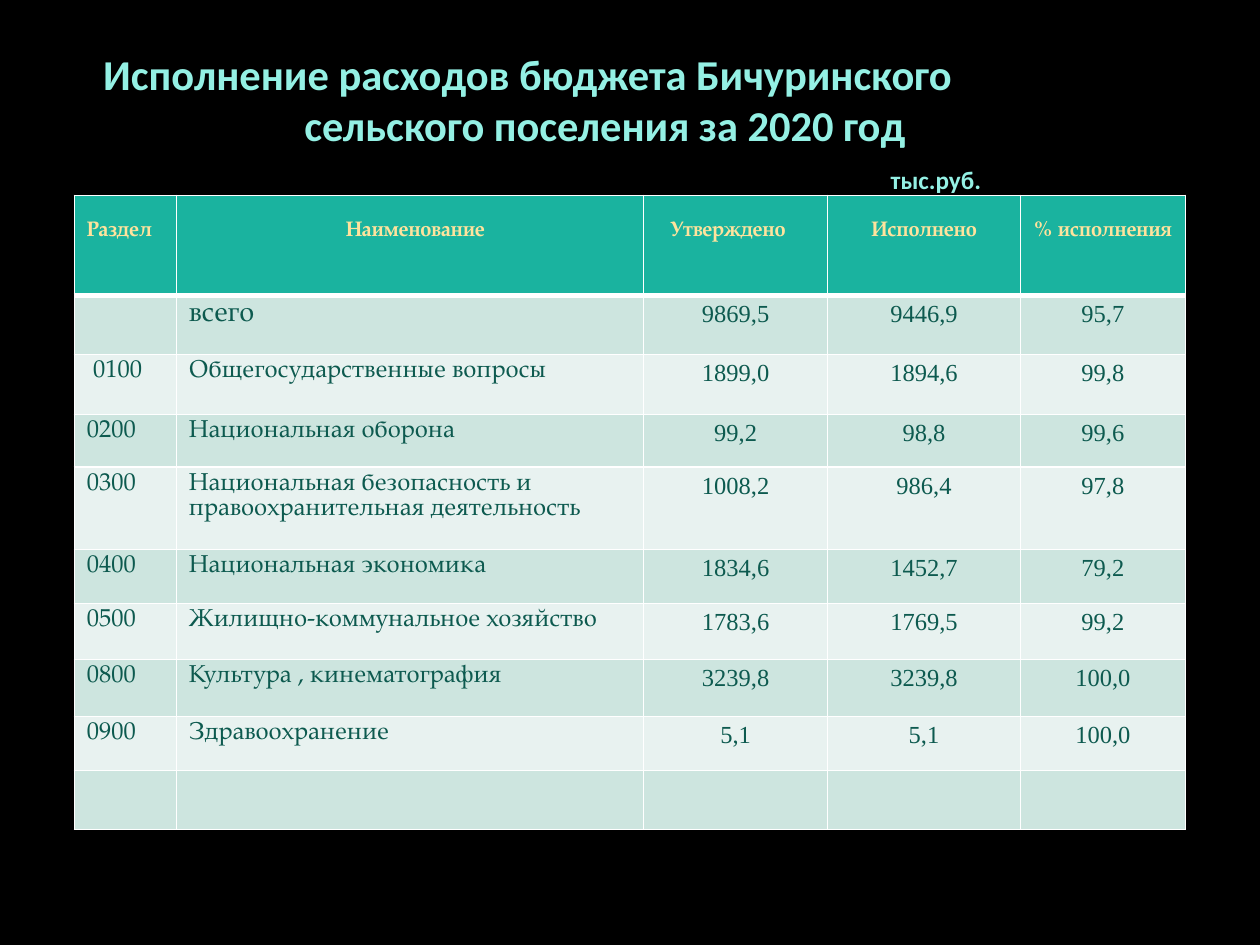
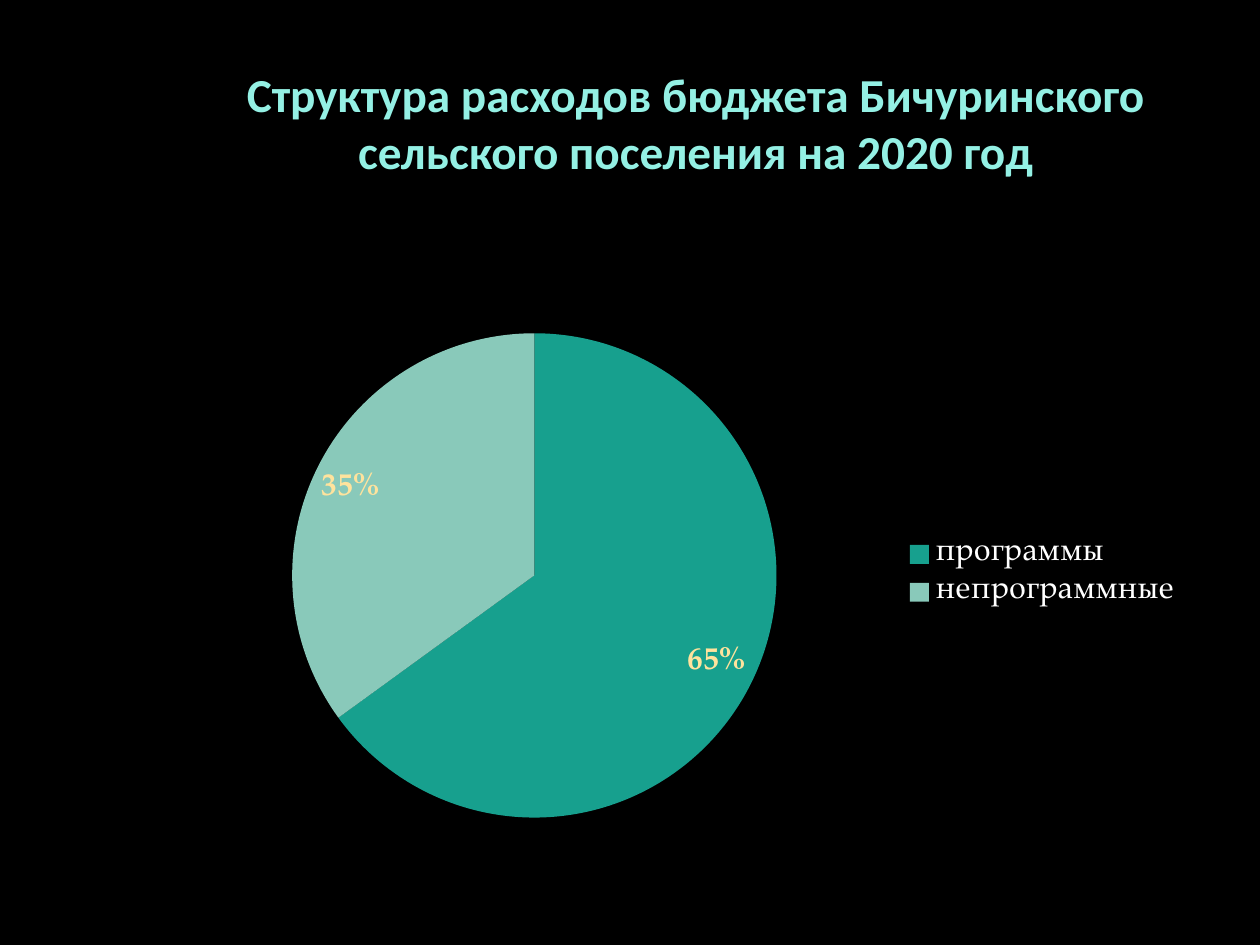
"""Builds two slides on the 2020 budget spending of a rural settlement."""
from dataclasses import dataclass

from lxml.etree import SubElement
from pptx import Presentation
from pptx.chart.data import CategoryChartData as ChartData
from pptx.dml.color import RGBColor as Color
from pptx.enum.chart import XL_CHART_TYPE as ChartType
from pptx.enum.chart import XL_LABEL_POSITION as LabelPosition
from pptx.enum.chart import XL_LEGEND_POSITION as LegendPosition
from pptx.enum.text import MSO_ANCHOR as Anchor
from pptx.enum.text import PP_ALIGN as Align
from pptx.oxml import parse_xml
from pptx.oxml.ns import nsdecls, qn
from pptx.util import Pt


@dataclass(frozen=True)
class Theme:
    background: str = "000000"
    title: str = "94F0E4"
    heading: str = "FFE39D"
    header_fill: str = "1AB39F"
    bands: tuple = ("CDE5DF", "E8F2F0")
    body: str = "0D5A4F"
    white: str = "FFFFFF"
    slices: tuple = ("17A08E", "89C9BA")
    title_font: str = "Calibri"
    text_font: str = "TeX Gyre Pagella"
    number_font: str = "Times New Roman"
    header_size: float = 12
    body_size: float = 14
    total_size: float = 16
    chart_size: float = 18
    unit_size: float = 14.4
    table_title_size: float = 24.3
    chart_title_size: float = 27
    leading: float = 1.04


THEME = Theme()

TABLE_TITLE = [
    ("Исполнение расходов бюджета Бичуринского", THEME.table_title_size, 34, 0),
    ("сельского поселения за 2020 год", THEME.table_title_size, 149, 0),
    ("тыс.руб.", THEME.unit_size, 484, 8),
]
CHART_TITLE = [
    ("Структура расходов бюджета Бичуринского", THEME.chart_title_size, 0, 0),
    ("сельского поселения на 2020 год", THEME.chart_title_size, 0, 0),
]

HEADERS = [
    ("Раздел", Align.LEFT, 7.2, 0),
    ("Наименование", Align.CENTER, 7.2, 1.2),
    ("Утверждено", Align.CENTER, 0, 9),
    ("Исполнено", Align.CENTER, 0, 0),
    ("% исполнения", Align.CENTER, 0, 0),
]
SPENDING = [
    ("", "всего", "9869,5", "9446,9", "95,7"),
    (" 0100", "Общегосударственные вопросы", "1899,0", "1894,6", "99,8"),
    ("0200", "Национальная оборона", "99,2", "98,8", "99,6"),
    ("0300", "Национальная безопасность и правоохранительная деятельность",
     "1008,2", "986,4", "97,8"),
    ("0400", "Национальная экономика", "1834,6", "1452,7", "79,2"),
    ("0500", "Жилищно-коммунальное хозяйство", "1783,6", "1769,5", "99,2"),
    ("0800", "Культура , кинематография", "3239,8", "3239,8", "100,0"),
    ("0900", "Здравоохранение", "5,1", "5,1", "100,0"),
    ("", "", "", "", ""),
]
COLUMN_WIDTHS = (58.3, 267.1, 105.1, 110.2, 94.3)
ROW_HEIGHTS = (57.4, 33.6, 34.2, 30.2, 47.2, 30.6, 32.2, 32.4, 31, 33.8)
SHARES = {"программы": 0.65, "непрограммные": 0.35}
PIE_AREA = {"x": 0.133, "y": 0.098, "w": 0.465, "h": 0.811}


def apply(target, **values):
    for name, value in values.items():
        setattr(target, name, value)


def set_font(font, name, size, color, bold=False):
    apply(font, name=name, size=Pt(size), bold=bold)
    font.color.rgb = Color.from_string(color)


def set_fill(fill, color):
    fill.solid()
    fill.fore_color.rgb = Color.from_string(color)


def add_page(deck):
    page = deck.slides.add_slide(deck.slide_layouts[6])
    set_fill(page.background.fill, THEME.background)
    return page


def add_title(page, lines, place, align):
    box = page.shapes.add_textbox(*map(Pt, place))
    frame = box.text_frame
    apply(frame, word_wrap=True, vertical_anchor=Anchor.TOP,
          margin_left=0, margin_right=0, margin_top=0, margin_bottom=0)
    for index, (text, size, indent, gap) in enumerate(lines):
        para = frame.add_paragraph() if index else frame.paragraphs[0]
        apply(para, alignment=align, space_before=Pt(gap))
        para._p.get_or_add_pPr().set("marL", str(Pt(indent)))
        span = para.add_run()
        span.text = text
        set_font(span.font, THEME.title_font, size, THEME.title, True)


def set_borders(cell, widths):
    properties = cell._tc.get_or_add_tcPr()
    for index, (side, width) in enumerate(widths.items()):
        line = parse_xml(f'<a:{side} {nsdecls("a")} w="{Pt(width)}"/>')
        solid = SubElement(line, qn("a:solidFill"))
        SubElement(solid, qn("a:srgbClr")).set("val", THEME.white)
        properties.insert(index, line)


def fill_cell(cell, text, font, size, color, align, margins, bold=False, leading=None):
    left, right, top = margins
    apply(cell, margin_left=Pt(left), margin_right=Pt(right), margin_top=Pt(top))
    para = cell.text_frame.paragraphs[0]
    para.alignment = align
    if leading:
        para.line_spacing = Pt(round(size * leading, 1))
    if text:
        span = para.add_run()
        span.text = text
        set_font(span.font, font, size, color, bold)


def add_spending_table(page):
    place = (42.5, 111.6, sum(COLUMN_WIDTHS), sum(ROW_HEIGHTS))
    table = page.shapes.add_table(
        len(ROW_HEIGHTS), len(COLUMN_WIDTHS), *map(Pt, place)).table
    for column, width in zip(table.columns, COLUMN_WIDTHS):
        column.width = Pt(width)
    for row, height in zip(table.rows, ROW_HEIGHTS):
        row.height = Pt(height)

    for column, (text, align, left, right) in enumerate(HEADERS):
        cell = table.cell(0, column)
        fill_cell(cell, text, THEME.text_font, THEME.header_size, THEME.heading,
                  align, (left, right, 14.3), True, THEME.leading)
        set_fill(cell.fill, THEME.header_fill)
        set_borders(cell, {"lnL": 1, "lnR": 1, "lnT": 1, "lnB": 3})

    for row, values in enumerate(SPENDING, 1):
        for column, text in enumerate(values):
            cell = table.cell(row, column)
            if column < 2:
                size = THEME.total_size if row == 1 else THEME.body_size
                fill_cell(cell, text, THEME.text_font, size, THEME.body,
                          Align.LEFT, (7.2, 7.2, 2.5), leading=THEME.leading)
            else:
                fill_cell(cell, text, THEME.number_font, THEME.body_size,
                          THEME.body, Align.CENTER, (7.2, 7.2, 3))
            set_fill(cell.fill, THEME.bands[(row - 1) % 2])
            set_borders(cell, {"lnL": 1, "lnR": 1,
                               "lnT": 3 if row == 1 else 1, "lnB": 1})


def place_plot(chart):
    area = chart._chartSpace.chart.plotArea
    for old in area.findall(qn("c:layout")):
        area.remove(old)
    layout = parse_xml(f'<c:layout {nsdecls("c")}/>')
    manual = SubElement(layout, qn("c:manualLayout"))
    settings = {"layoutTarget": "inner", "xMode": "edge", "yMode": "edge", **PIE_AREA}
    for name, value in settings.items():
        SubElement(manual, qn(f"c:{name}")).set("val", str(value))
    area.insert(0, layout)


def add_share_chart(page):
    data = ChartData(number_format="0%")
    data.categories = list(SHARES)
    data.add_series("Series 1", list(SHARES.values()))
    place = (87.8, 157, 595.4, 341.3)
    chart = page.shapes.add_chart(ChartType.PIE, *map(Pt, place), data).chart
    apply(chart, has_title=False, has_legend=True)
    set_font(chart.font, THEME.text_font, THEME.chart_size, THEME.white)
    apply(chart.legend, position=LegendPosition.RIGHT, include_in_layout=False)
    place_plot(chart)

    plot = chart.plots[0]
    apply(plot, vary_by_categories=True, has_data_labels=True)
    labels = plot.data_labels
    apply(labels, show_value=True, show_percentage=False, number_format="0%",
          number_format_is_linked=False, position=LabelPosition.BEST_FIT)
    set_font(labels.font, THEME.text_font, THEME.chart_size, THEME.heading, True)
    for index, color in enumerate(THEME.slices):
        form = plot.series[0].points[index].format
        set_fill(form.fill, color)
        form.line.fill.background()


def main():
    deck = Presentation()
    apply(deck, slide_width=Pt(720), slide_height=Pt(540))

    page = add_page(deck)
    add_title(page, TABLE_TITLE, (25, 27.7, 646, 84), Align.LEFT)
    add_spending_table(page)

    page = add_page(deck)
    add_title(page, CHART_TITLE, (111, 37.2, 573, 66), Align.CENTER)
    add_share_chart(page)

    deck.save("out.pptx")


if __name__ == "__main__":
    main()
